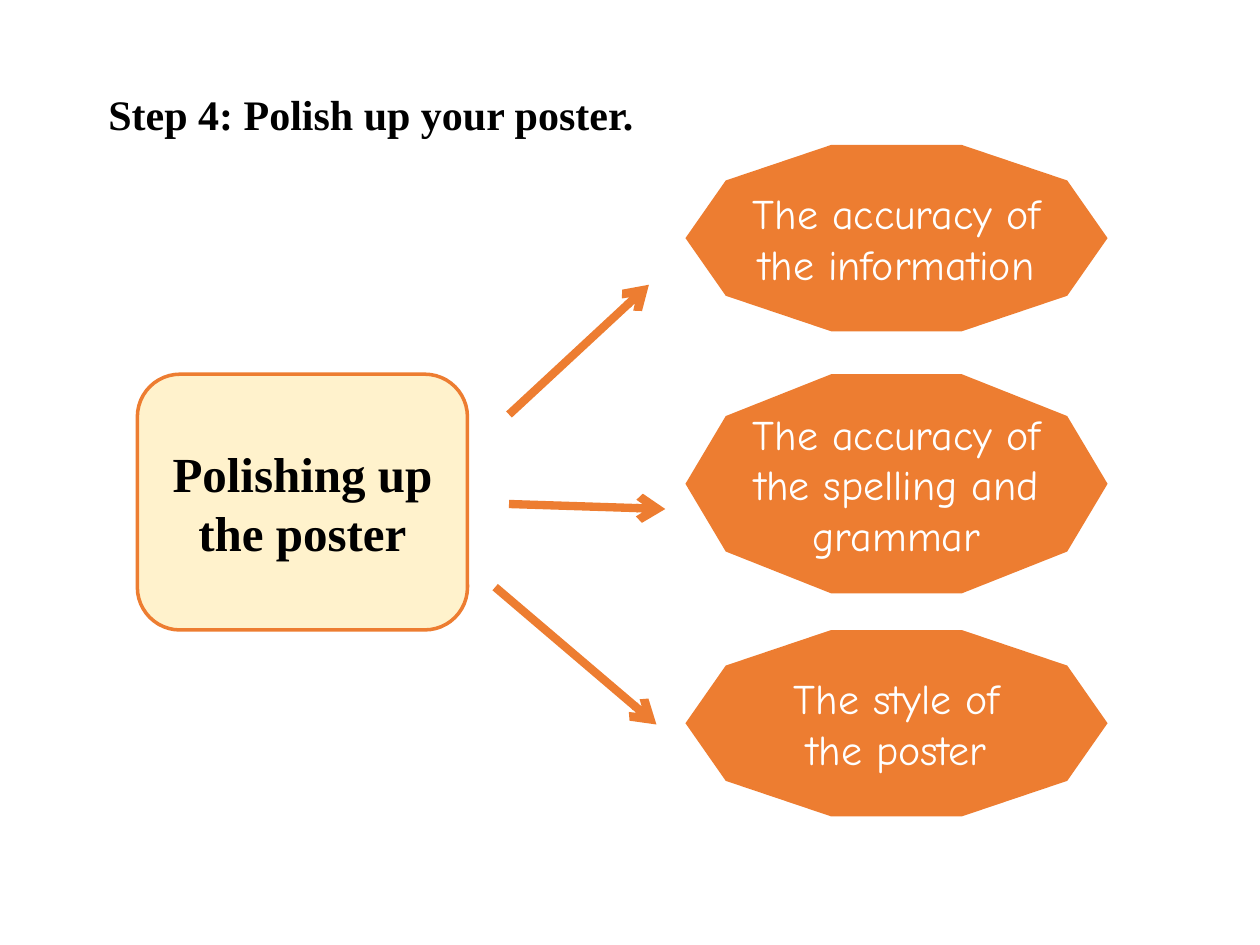
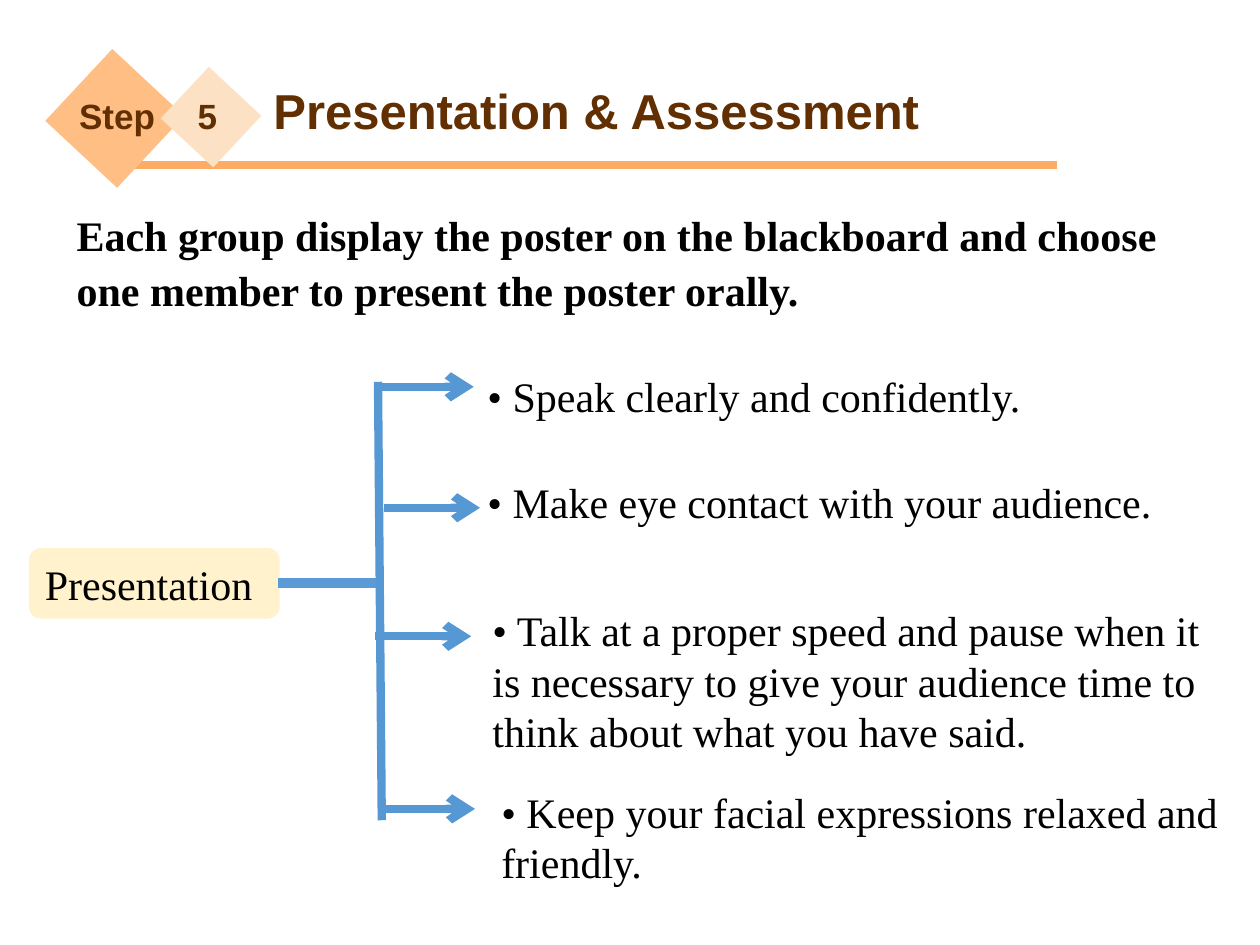
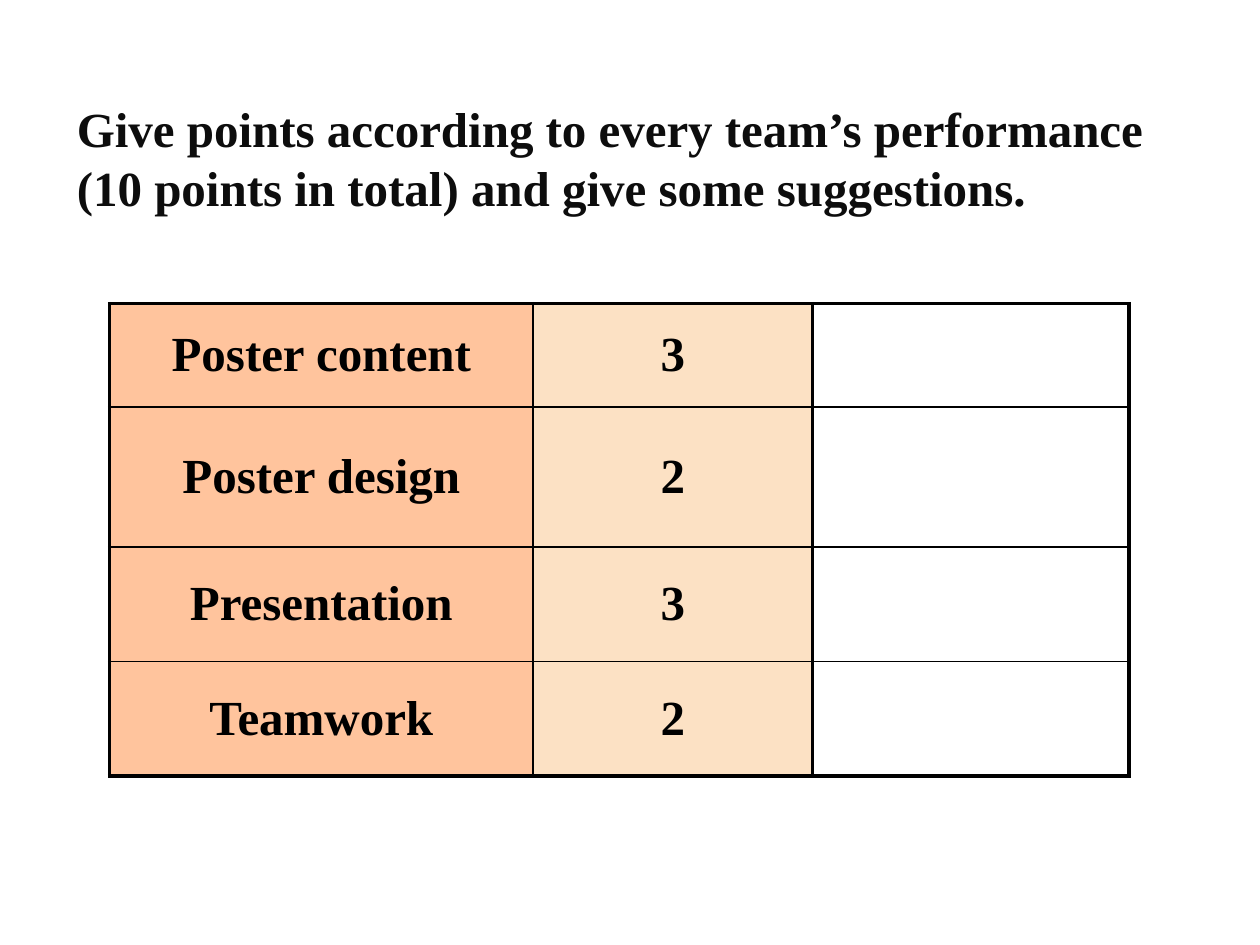
from lxml.etree import SubElement
from pptx import Presentation
from pptx.dml.color import RGBColor
from pptx.enum.shapes import MSO_CONNECTOR, MSO_SHAPE
from pptx.enum.text import MSO_ANCHOR, MSO_AUTO_SIZE, PP_ALIGN
from pptx.oxml.ns import qn
from pptx.util import Inches, Pt

COLORS = {
    "black": "000000", "ink": "0D0D0D", "white": "FFFFFF", "brown": "612F02",
    "orange": "ED7D31", "cream": "FFF2CC", "rule": "FCAC64",
    "diamond": "FFBE83", "pale": "FCE1C4", "peach": "FFC49D",
    "stem": "5B9BD5", "blue": "5698D3",
}
RGB = {name: RGBColor.from_string(value) for name, value in COLORS.items()}
SERIF, SANS, HAND = "Times New Roman", "Arial", "Comic Neue"

prs = Presentation()
prs.slide_width, prs.slide_height = Inches(10), Inches(7.5)
UNIT = prs.slide_width / 100


def add_box(s, kind, box, text="", size=24, color="black", font=SERIF, bold=False,
            fill=None, line=None, align=PP_ALIGN.LEFT, anchor=MSO_ANCHOR.TOP,
            spacing=1.0, wrap=True):
    left, top, width, height = [round(v * UNIT) for v in box]
    if kind == "title":
        sp = s.shapes.title
        sp.left, sp.top, sp.width, sp.height = left, top, width, height
    elif kind == "text":
        sp = s.shapes.add_textbox(left, top, width, height)
    else:
        sp = s.shapes.add_shape(kind, left, top, width, height)
        sp.shadow.inherit = False
        sp.fill.solid()
        sp.fill.fore_color.rgb = RGB[fill]
        if line:
            sp.line.color.rgb, sp.line.width = RGB[line], Pt(2)
        else:
            sp.line.fill.background()
    tf = sp.text_frame
    tf.text = text
    tf.word_wrap, tf.auto_size, tf.vertical_anchor = wrap, MSO_AUTO_SIZE.NONE, anchor
    for p in tf.paragraphs:
        p.alignment, p.line_spacing = align, spacing
        for r in p.runs:
            r.font.name, r.font.size, r.font.bold = font, Pt(size), bold
            r.font.color.rgb = RGB[color]
    return sp


def add_line(s, ends, color, width=4.75, arrow=True):
    cx = s.shapes.add_connector(MSO_CONNECTOR.STRAIGHT, *[round(v * UNIT) for v in ends])
    cx.line.color.rgb, cx.line.width = RGB[color], Pt(width)
    spPr = cx._element.spPr
    if arrow:
        SubElement(spPr.find(qn("a:ln")), qn("a:tailEnd"), type="arrow")
    SubElement(spPr, qn("a:effectLst"))


title_only = prs.slide_layouts[5]

s = prs.slides.add_slide(title_only)
add_box(s, "title", (7.6, 5.7, 87.6, 5.8), "Step 4: Polish up your poster.",
        bold=True, spacing=1.2)
add_box(s, MSO_SHAPE.ROUNDED_RECTANGLE, (10.9, 29.7, 26.2, 20.3), "Polishing up the poster",
        size=28, bold=True, fill="cream", line="orange",
        align=PP_ALIGN.CENTER, anchor=MSO_ANCHOR.MIDDLE)
checks = [
    (11.5, 14.8, "The accuracy of the information"),
    (29.7, 17.4, "The accuracy of the spelling and grammar"),
    (50, 14.8, "The style of\nthe poster"),
]
for top, height, text in checks:
    add_box(s, MSO_SHAPE.DECAGON, (54.4, top, 33.5, height), text, color="white",
            font=HAND, fill="orange", align=PP_ALIGN.CENTER, anchor=MSO_ANCHOR.MIDDLE)
for ends in [(40.4, 32.9, 51.5, 22.6), (40.4, 40, 52.8, 40.4), (39.3, 46.6, 52.1, 57.5)]:
    add_line(s, ends, "orange")

s = prs.slides.add_slide(title_only)
add_line(s, (10.6, 13.1, 83.9, 13.1), "rule", 4.5, arrow=False)
add_box(s, "title", (20.7, 5.9, 63.6, 5.7), "Presentation & Assessment",
        size=28, color="brown", font=SANS, bold=True)
for box, fill in [((5.2, 5.5, 7.8, 7.8), "diamond"), ((13.9, 6.5, 5.7, 5.6), "pale")]:
    add_box(s, MSO_SHAPE.RECTANGLE, box, fill=fill).rotation = 43
for left, width, text in [(5.3, 8, "Step"), (14.7, 3.5, "5")]:
    add_box(s, "text", (left, 7, width, 4.4), text, size=20, color="brown",
            font=SANS, bold=True, wrap=False)
add_box(s, "text", (5.1, 15.7, 92.6, 9.9),
        "Each group display the poster on the blackboard and choose one member "
        "to present the poster orally.", bold=True, spacing=1.1)

sp = add_box(s, MSO_SHAPE.ROUNDED_RECTANGLE, (2.3, 43.5, 19.9, 5.6), "Presentation",
             fill="cream", anchor=MSO_ANCHOR.MIDDLE)
sp.adjustments[0] = 0.17
add_line(s, (22.1, 46.3, 30, 46.3), "stem", 5.75, arrow=False)
add_line(s, (30, 30.3, 30.3, 65.1), "blue", arrow=False)
tips = [
    (30, 30.7, (37.7, 28.9, 61, 5), "• Speak clearly and confidently."),
    (30.5, 40.3, (37.7, 37.3, 56.2, 9.1), "• Make eye contact with your audience."),
    (29.8, 50.5, (38.1, 47.5, 60.3, 17.2),
     "• Talk at a proper speed and pause when it is necessary to give your audience "
     "time to think about what you have said."),
    (30.1, 64.2, (38.8, 61.9, 58.9, 9.1),
     "• Keep your facial expressions relaxed and\nfriendly."),
]
for x, y, box, text in tips:
    add_line(s, (x, y, x + 7.6, y), "blue")
    add_box(s, "text", box, text, wrap="\n" not in text)

s = prs.slides.add_slide(title_only)
add_box(s, "title", (5.1, 7.3, 87.5, 10.4),
        "Give points according to every team’s performance (10 points in total) "
        "and give some suggestions.", size=28, color="ink", bold=True)
scores = [("Poster content", "3"), ("Poster design", "2"), ("Presentation", "3"), ("Teamwork", "2")]
widths, heights = [33.6, 22.2, 25.1], [8.2, 11.1, 9.1, 9.1]
THICK, THIN = Pt(2.25), Pt(1)
column_edges = [THICK, THIN, THICK, THICK]
row_edges = [THICK, THIN, THIN, THIN, THICK]
frame = [round(v * UNIT) for v in (8.7, 24.1, sum(widths), sum(heights))]
table = s.shapes.add_table(len(heights), len(widths), *frame).table
table.first_row = table.horz_banding = False
for column, width in zip(table.columns, widths):
    column.width = round(width * UNIT)
for row, height in zip(table.rows, heights):
    row.height = round(height * UNIT)
for i, score in enumerate(scores):
    for j, fill in enumerate(["peach", "pale", None]):
        cell = table.cell(i, j)
        tcPr = cell._tc.get_or_add_tcPr()
        edges = {"lnL": column_edges[j], "lnR": column_edges[j + 1],
                 "lnT": row_edges[i], "lnB": row_edges[i + 1]}
        for tag, width in edges.items():
            ln = SubElement(tcPr, qn(f"a:{tag}"), w=str(width))
            SubElement(SubElement(ln, qn("a:solidFill")), qn("a:srgbClr"), val=COLORS["black"])
        if not fill:
            cell.fill.background()
            continue
        cell.fill.solid()
        cell.fill.fore_color.rgb = RGB[fill]
        cell.vertical_anchor = MSO_ANCHOR.MIDDLE
        cell.text = score[j]
        p = cell.text_frame.paragraphs[0]
        p.alignment = PP_ALIGN.CENTER
        r = p.runs[0]
        r.font.name, r.font.size, r.font.bold = SERIF, Pt(28), True
        r.font.color.rgb = RGB["black"]

prs.save("out.pptx")
